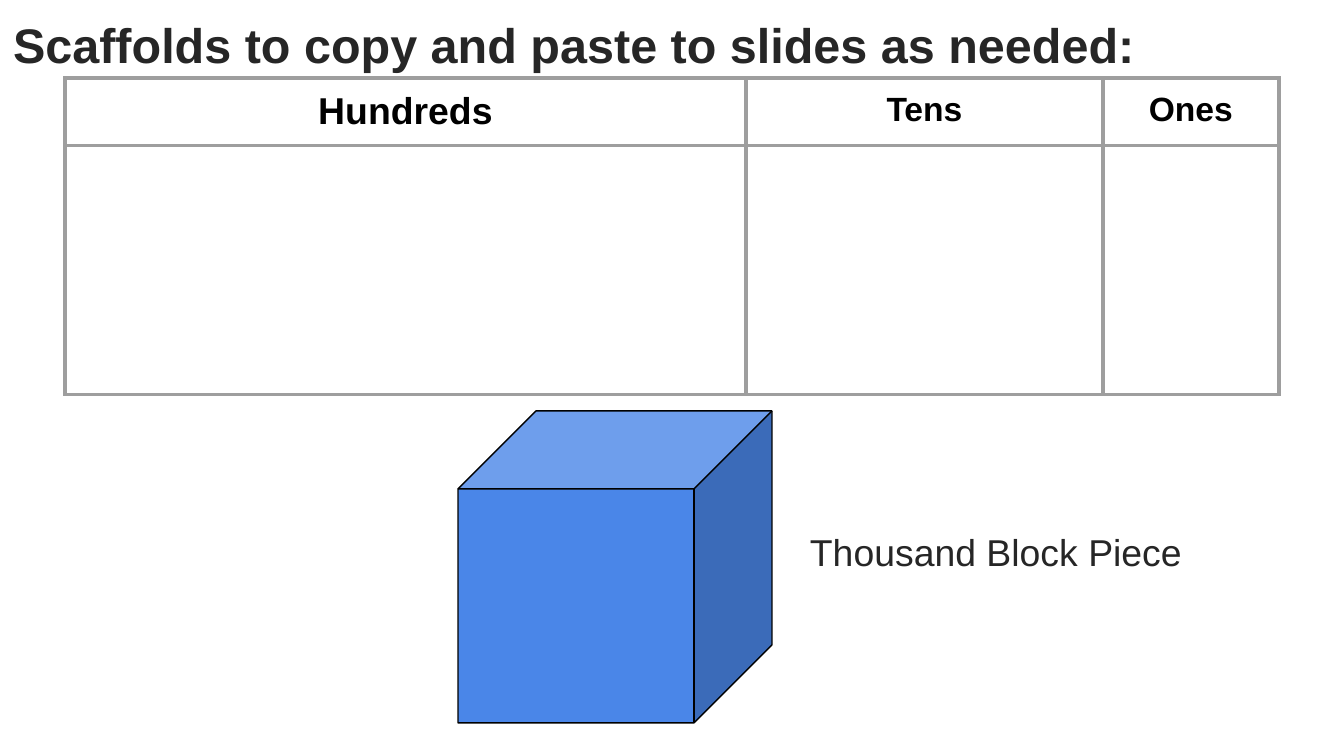
from lxml import etree
from pptx import Presentation
from pptx.dml.color import RGBColor
from pptx.enum.shapes import MSO_SHAPE
from pptx.enum.text import MSO_ANCHOR, MSO_AUTO_SIZE, PP_ALIGN
from pptx.oxml.ns import qn
from pptx.util import Emu, Pt

CUBE = MSO_SHAPE.CUBE
TOP = MSO_ANCHOR.TOP
NO_AUTOFIT = MSO_AUTO_SIZE.NONE
LEFT, CENTER = PP_ALIGN.LEFT, PP_ALIGN.CENTER

EMU_PER_PX = 914400 / 134.4
TITLE_ONLY = 5


def px(length):
    return Emu(round(length * EMU_PER_PX))


def color(hex_string):
    return RGBColor.from_string(hex_string)


class SlideBuilder:
    font = "Arial"
    ink = "262626"
    black = "000000"
    grid = "9E9E9E"
    block_blue = "4A86E8"
    inset = 13
    line_spacing = 1.08

    def __init__(self, slide):
        self.slide = slide

    def add_run(self, paragraph, text, size, ink, bold):
        run = paragraph.add_run()
        run.text = text
        run.font.name = self.font
        run.font.size = Pt(size)
        run.font.bold = bold
        run.font.color.rgb = color(ink)

    def fill_frame(self, frame, text, size, bold):
        frame.word_wrap = True
        frame.auto_size = NO_AUTOFIT
        frame.vertical_anchor = TOP
        frame.margin_left = frame.margin_right = px(self.inset)
        frame.margin_top = frame.margin_bottom = px(self.inset)
        paragraph = frame.paragraphs[0]
        paragraph.alignment = LEFT
        paragraph.space_before = Pt(0)
        paragraph.line_spacing = self.line_spacing
        self.add_run(paragraph, text, size, self.ink, bold)

    def title(self, text, left, top, width, height, size):
        heading = self.slide.shapes.title
        heading.left, heading.top = px(left), px(top)
        heading.width, heading.height = px(width), px(height)
        self.fill_frame(heading.text_frame, text, size, True)

    def label(self, text, left, top, width, height, size):
        caption = self.slide.shapes.add_textbox(
            px(left), px(top), px(width), px(height))
        self.fill_frame(caption.text_frame, text, size, False)

    def cube(self, left, top, width, height):
        block = self.slide.shapes.add_shape(
            CUBE, px(left), px(top), px(width), px(height))
        block.adjustments[0] = 0.25
        block.shadow.inherit = False
        block.fill.solid()
        block.fill.fore_color.rgb = color(self.block_blue)
        block.line.color.rgb = color(self.black)
        block.line.width = Pt(0.75)

    def outline_cell(self, cell):
        """Draw all four borders; they must precede the cell's fill."""
        properties = cell._tc.get_or_add_tcPr()
        for side in ("a:lnL", "a:lnR", "a:lnT", "a:lnB"):
            border = etree.SubElement(properties, qn(side), w=str(Pt(2.25)))
            solid = etree.SubElement(border, qn("a:solidFill"))
            etree.SubElement(solid, qn("a:srgbClr"), val=self.grid)

    def place_value_table(self, headings, left, top, widths, heights):
        """headings holds a (text, size) pair for each column."""
        table = self.slide.shapes.add_table(
            len(heights), len(widths), px(left), px(top),
            px(sum(widths)), px(sum(heights))).table
        for column, width in zip(table.columns, widths):
            column.width = px(width)
        for row, height in zip(table.rows, heights):
            row.height = px(height)
        for cell in table.iter_cells():
            self.outline_cell(cell)
            cell.fill.background()
            cell.margin_left = cell.margin_right = px(self.inset)
            cell.margin_top = cell.margin_bottom = px(self.inset)
        for column, (text, size) in enumerate(headings):
            paragraph = table.cell(0, column).text_frame.paragraphs[0]
            paragraph.alignment = CENTER
            self.add_run(paragraph, text, size, self.black, True)


def main():
    deck = Presentation()
    deck.slide_width, deck.slide_height = px(1344), px(756)
    builder = SlideBuilder(
        deck.slides.add_slide(deck.slide_layouts[TITLE_ONLY]))

    builder.title("Scaffolds to copy and paste to slides as needed:",
                  0, -3, 1388, 69, 26)
    builder.place_value_table(
        [("Hundreds", 20), ("Tens", 18), ("Ones", 18)],
        65, 78, widths=[681, 357, 176], heights=[63, 249])
    builder.label("Thousand Block Piece", 797, 513, 434, 54, 20)
    builder.cube(458, 411, 314, 312)

    deck.save("out.pptx")


if __name__ == "__main__":
    main()
